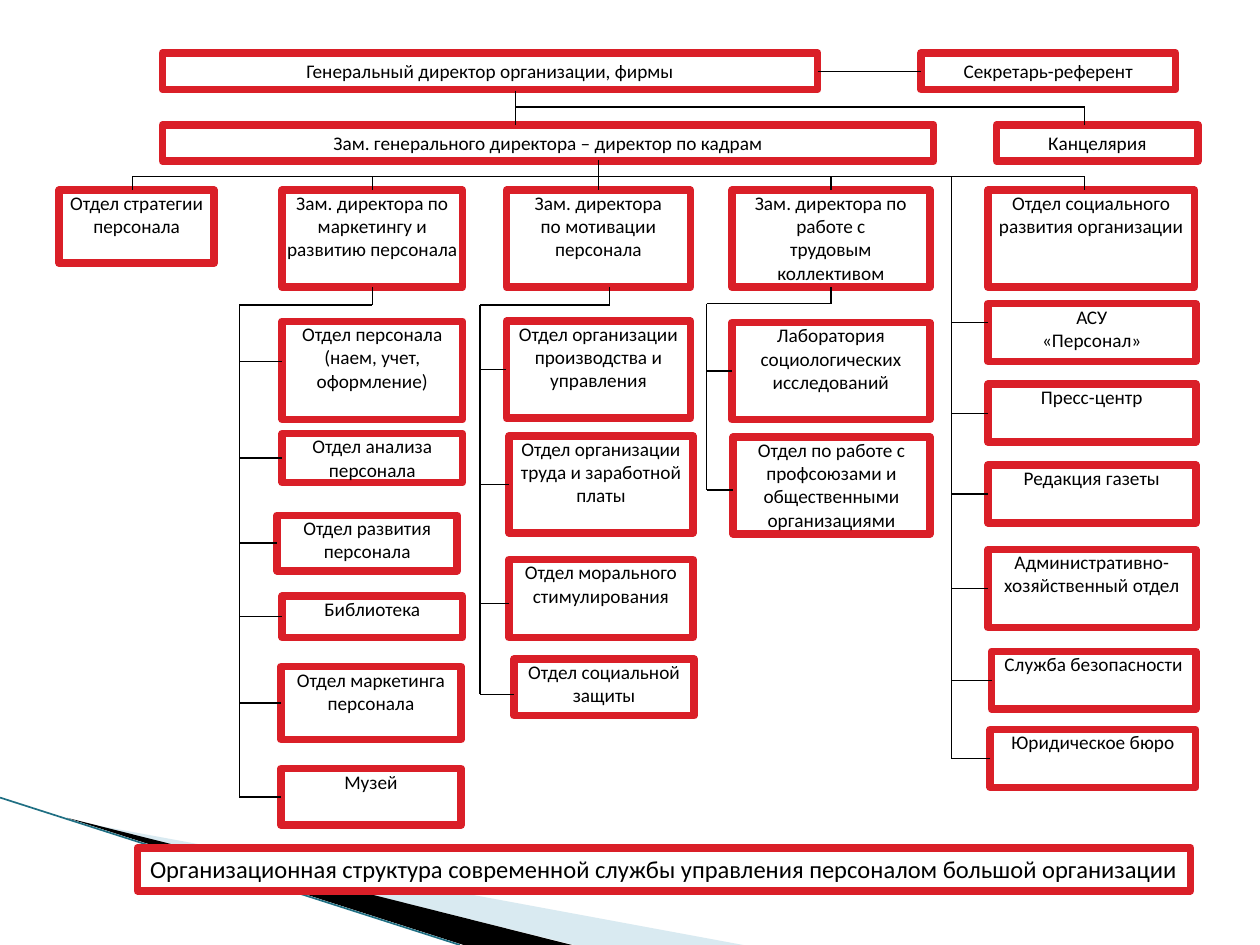
from dataclasses import dataclass
from typing import Optional

from lxml.etree import SubElement
from pptx import Presentation
from pptx.dml.color import RGBColor
from pptx.enum.shapes import MSO_CONNECTOR, MSO_SHAPE
from pptx.enum.text import MSO_ANCHOR, PP_ALIGN
from pptx.oxml.ns import qn
from pptx.util import Inches, Pt

TOP, LEFT, BOTTOM, RIGHT = range(4)


@dataclass(frozen=True)
class Theme:
    font: str = "Calibri"
    text_size: int = 11
    caption_size: int = 14
    ink: RGBColor = RGBColor(0, 0, 0)
    paper: RGBColor = RGBColor(255, 255, 255)
    border: RGBColor = RGBColor(0xDA, 0x1F, 0x28)
    wave: RGBColor = RGBColor(0xA0, 0xCB, 0xDC)
    wave_edge: RGBColor = RGBColor(0x1F, 0x6F, 0x83)
    border_width: float = 4.33
    line_width: float = 0.75


THEME = Theme()


@dataclass(frozen=True)
class Box:
    left: float
    top: float
    width: float
    height: float


@dataclass(frozen=True)
class Unit:
    """A department, placed from the corner of its column."""
    text: str
    indent: float
    drop: float
    height: float
    joint: Optional[float] = None  # branch position when not at mid-height
    width: Optional[float] = None


def add_card(page, box, text, size=THEME.text_size, insets=(0.02, 0.01)):
    card = page.shapes.add_shape(MSO_SHAPE.RECTANGLE, Inches(box.left), Inches(box.top),
                                 Inches(box.width), Inches(box.height))
    card.shadow.inherit = False
    card.fill.solid()
    card.fill.fore_color.rgb = THEME.paper
    card.line.color.rgb = THEME.border
    card.line.width = Pt(THEME.border_width)
    frame = card.text_frame
    frame.word_wrap = True
    frame.vertical_anchor = MSO_ANCHOR.TOP
    frame.margin_left = frame.margin_right = Inches(insets[0])
    frame.margin_top = frame.margin_bottom = Inches(insets[1])
    frame.text = text
    for para in frame.paragraphs:
        para.alignment = PP_ALIGN.CENTER
        for span in para.runs:
            span.font.name = THEME.font
            span.font.size = Pt(size)
            span.font.color.rgb = THEME.ink
    return card


def add_line(page, start, end, color=THEME.ink, width=THEME.line_width):
    line = page.shapes.add_connector(MSO_CONNECTOR.STRAIGHT, *map(Inches, start + end))
    line.line.color.rgb = color
    line.line.width = Pt(width)
    SubElement(line._element.spPr, qn("a:effectLst"))
    return line


def add_wave(page, box):
    """Slanting bands in the lower left corner."""
    bands = [
        (THEME.wave, 40, [(0.55, 0.18), (5.9, 1.17), (4.56, 1.17)]),
        (THEME.ink, 100, [(0.53, 0.16), (4.54, 1.17), (3.68, 1.17)]),
    ]
    for color, opacity, points in bands:
        corners = [(Inches(box.left + x), Inches(box.top + y)) for x, y in points]
        builder = page.shapes.build_freeform(*corners[0], scale=1.0)
        builder.add_line_segments(corners[1:], close=True)
        band = builder.convert_to_shape()
        band.shadow.inherit = False
        band.fill.solid()
        band.fill.fore_color.rgb = color
        band.line.fill.background()
        if opacity < 100:
            tint = band._element.spPr.find(qn("a:solidFill"))[0]
            SubElement(tint, qn("a:alpha")).set("val", str(opacity * 1000))
    add_line(page, (box.left, box.top), (box.left + 3.65, box.top + box.height),
             THEME.wave_edge, 0.95)


def add_leadership(page, box):
    """Director, secretary, deputy and chancellery; returns the deputy's card."""
    def place(text, x, y, width):
        return add_card(page, Box(box.left + x, box.top + y, width, 0.29), text,
                        insets=(0.1, 0.05))

    director = place("Генеральный директор организации, фирмы", 0, 0, 5.2)
    secretary = place("Секретарь-референт", 6.02, 0, 2.02)
    deputy = place("Зам. генерального директора – директор по кадрам", 0, 0.57, 6.12)
    place("Канцелярия", 6.62, 0.57, 1.6)

    link = add_line(page, (box.left + 5.2, box.top), (box.left + 6.02, box.top))
    link.begin_connect(director, RIGHT)
    link.end_connect(secretary, LEFT)
    trunk, office = box.left + 2.8, box.left + 7.32
    bar, lower = box.top + 0.43, box.top + 0.57
    add_line(page, (trunk, box.top + 0.3), (trunk, lower))
    add_line(page, (trunk, bar), (office, bar))
    add_line(page, (office, bar), (office, lower))
    return deputy


def add_divisions(page, box):
    """Row of division heads under a shared bar; returns their cards."""
    heads = [  # text, offset, width, height, branch offset when not at mid-width
        ("Отдел стратегии персонала", 0, 1.23, 0.58, 0.58),
        ("Зам. директора по маркетингу и развитию персонала", 1.77, 1.43, 0.77, None),
        ("Зам. директора\nпо мотивации\nперсонала", 3.55, 1.46, 0.77, None),
        ("Зам. директора по работе с\nтрудовым\nколлективом", 5.34, 1.57, 0.77, None),
        ("Отдел социального развития организации", 7.37, 1.64, 0.77, 8.14),
    ]
    bar, row = box.top, box.top + 0.11
    cards = []
    for text, offset, width, height, branch in heads:
        card = add_card(page, Box(box.left + offset, row, width, height), text)
        x = box.left + (offset + width / 2 if branch is None else branch)
        line = add_line(page, (x, bar), (x, row))
        if branch is None:
            line.end_connect(card, TOP)
        cards.append(card)
    add_line(page, (box.left + 0.58, bar), (box.left + 8.14, bar))
    # Trunk from the deputy director down to the bar
    trunk = box.left + 4.28
    add_line(page, (trunk, bar - 0.13), (trunk, bar))
    return cards


def add_column(page, box, units, head=None, branch=None):
    """Departments hung on a spine at the left edge of the box."""
    for unit in units:
        place = Box(box.left + unit.indent, box.top + unit.drop,
                    unit.width or box.width - unit.indent, unit.height)
        card = add_card(page, place, unit.text)
        joint = box.top + (unit.drop + unit.height / 2 if unit.joint is None else unit.joint)
        line = add_line(page, (box.left, joint), (place.left, joint))
        if unit.joint is None:
            line.end_connect(card, LEFT)
    add_line(page, (box.left, box.top), (box.left, joint))
    if head is None:
        return
    # Elbow from the head of the division
    x = (head.left + head.width / 2) / Inches(1) if branch is None else branch
    add_line(page, (box.left, box.top), (x, box.top))
    drop = add_line(page, (x, 2.28), (x, box.top))
    if branch is None:
        drop.begin_connect(head, BOTTOM)


MARKETING = [
    Unit("Отдел персонала (наем, учет,\nоформление)", 0.34, 0.13, 0.78, 0.45),
    Unit("Отдел анализа\nперсонала", 0.34, 1.02, 0.39),
    Unit("Отдел развития персонала", 0.3, 1.67, 0.44, width=1.43),
    Unit("Библиотека", 0.34, 2.31, 0.33),
    Unit("Отдел маркетинга персонала", 0.33, 2.87, 0.58, width=1.43),
    Unit("Музей", 0.33, 3.68, 0.45, width=1.43),
]
MOTIVATION = [
    Unit("Отдел организации производства и управления", 0.21, 0.13, 0.77, width=1.46),
    Unit("Отдел организации труда и заработной платы", 0.23, 1.04, 0.77),
    Unit("Отдел морального стимулирования", 0.23, 2.02, 0.62, 2.37),
    Unit("Отдел социальной защиты", 0.27, 2.81, 0.45, 3.09, 1.43),
]
COLLECTIVE = [
    Unit("Лаборатория социологических исследований", 0.2, 0.15, 0.77),
    Unit("Отдел по работе с\nпрофсоюзами и общественными организациями", 0.21, 1.06, 0.77, 1.48),
]
SERVICES = [
    Unit("АСУ\n«Персонал»", 0.29, 1.01, 0.46, 1.16),
    Unit("Пресс-центр", 0.29, 1.65, 0.46),
    Unit("Редакция газеты", 0.29, 2.29, 0.46),
    Unit("Административно- хозяйственный отдел", 0.29, 2.96, 0.62),
    Unit("Служба безопасности", 0.32, 3.77, 0.46),
    Unit("Юридическое бюро", 0.31, 4.39, 0.46),
]


def main():
    deck = Presentation()
    deck.slide_width, deck.slide_height = Inches(10), Inches(7.5)
    page = deck.slides.add_slide(deck.slide_layouts[6])

    add_wave(page, Box(0, 6.33, 5.9, 1.17))
    add_leadership(page, Box(1.29, 0.42, 8.22, 0.86))
    heads = add_divisions(page, Box(0.47, 1.4, 9.01, 0.88))
    add_column(page, Box(1.9, 2.42, 1.77, 4.13), MARKETING, heads[1])
    add_column(page, Box(3.81, 2.42, 1.69, 3.26), MOTIVATION, heads[2], 4.84)
    add_column(page, Box(5.61, 2.41, 1.77, 1.83), COLLECTIVE, heads[3])
    add_column(page, Box(7.55, 1.4, 1.94, 4.85), SERVICES)
    add_card(page, Box(1.09, 6.73, 8.36, 0.34),
             "Организационная структура современной службы управления персоналом большой организации",
             THEME.caption_size, (0.1, 0.05))
    deck.save("out.pptx")


if __name__ == "__main__":
    main()
